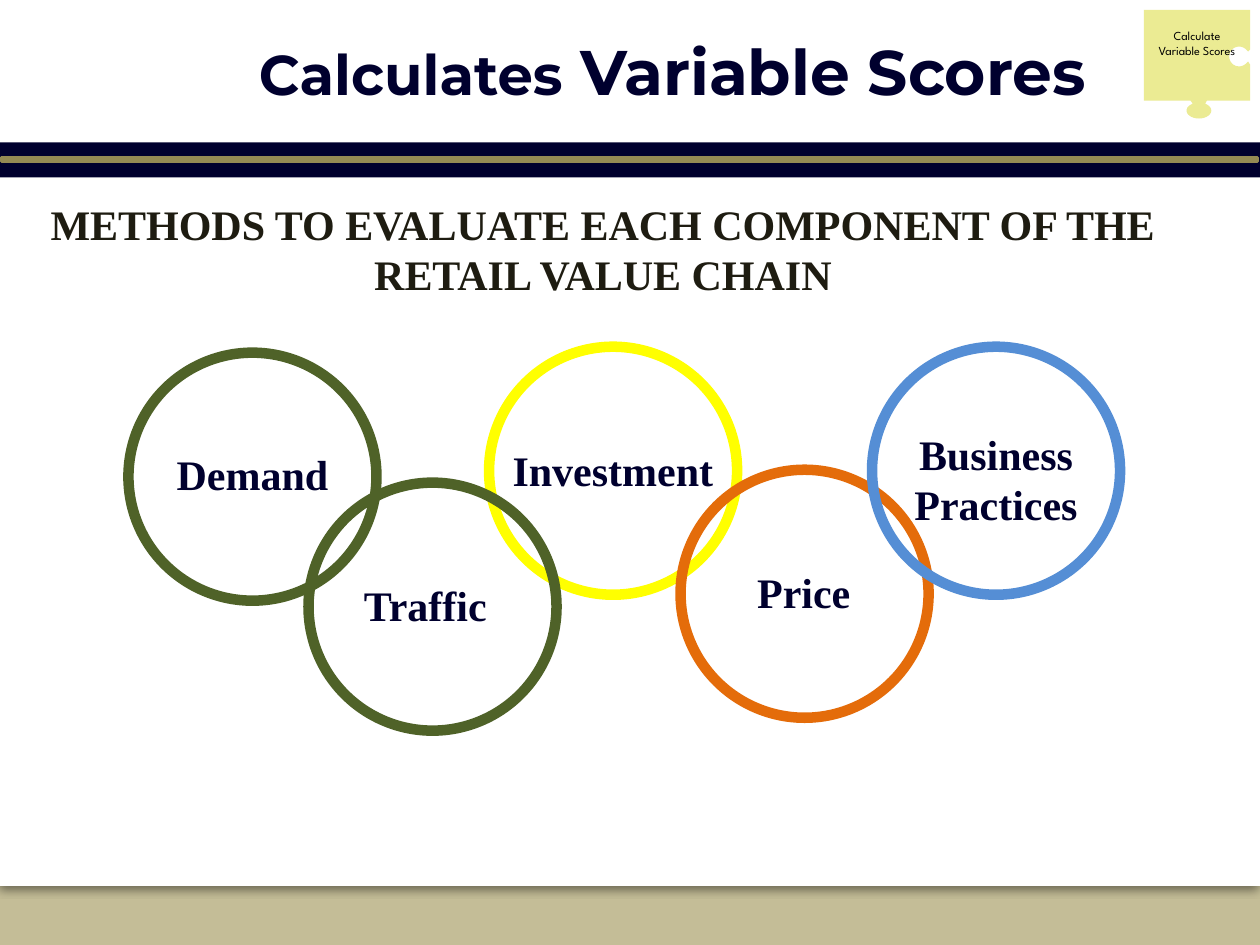
import math
from dataclasses import dataclass

import pptx
import pptx.dml.color
import pptx.enum.shapes
import pptx.enum.text
import pptx.oxml
import pptx.oxml.ns
import pptx.util

Cm = pptx.util.Cm
Pt = pptx.util.Pt
Shape = pptx.enum.shapes.MSO_SHAPE
Anchor = pptx.enum.text.MSO_ANCHOR


@dataclass(frozen=True)
class Theme:
    """Colours, fonts and sizes of the deck."""

    sand: str = "C4BD97"
    white: str = "FFFFFF"
    navy: str = "00002E"
    gold: str = "948A54"
    ink: str = "1E1C11"
    black: str = "000000"
    green: str = "4F6228"
    yellow: str = "FFFF00"
    orange: str = "E46C0A"
    blue: str = "558ED5"
    puzzle: str = "EBEB93"
    title_font: str = "Montserrat"
    body_font: str = "Times New Roman"
    puzzle_font: str = "League Spartan"
    title_sizes: tuple = (32, 36)
    body_size: int = 24
    puzzle_size: int = 7
    ring_width: int = 6
    ring_diameter: float = 5.0


def rgb(code):
    """Return a colour from its hex code."""
    return pptx.dml.color.RGBColor.from_string(code)


def arc(centre, radii, start, end, steps=24):
    """Return points along an elliptical arc, with angles in degrees."""
    angles = [math.radians(start + (end - start) * i / steps) for i in range(steps + 1)]
    return [(centre[0] + radii[0] * math.cos(a), centre[1] + radii[1] * math.sin(a)) for a in angles]


class ValueChainSlide:
    """Holds the theme and the current slide and draws its elements."""

    def __init__(self, deck, theme):
        """Add a title-only slide with the theme background."""
        self.theme = theme
        self.slide = deck.slides.add_slide(deck.slide_layouts[5])
        self.shapes = self.slide.shapes
        self.slide.background.fill.solid()
        self.slide.background.fill.fore_color.rgb = rgb(theme.sand)

    def paint(self, shape, fill=None, line=None, width=0):
        """Set fill and line, and drop the shadow."""
        shape.shadow.inherit = False
        if fill:
            shape.fill.solid()
            shape.fill.fore_color.rgb = rgb(fill)
        else:
            shape.fill.background()
        if line:
            shape.line.color.rgb = rgb(line)
            shape.line.width = Pt(width)
        else:
            shape.line.fill.background()
        return shape

    def style_text(self, frame, font, colour, size=None, bold=True):
        """Centre and format every paragraph of a text frame."""
        for paragraph in frame.paragraphs:
            paragraph.alignment = pptx.enum.text.PP_ALIGN.CENTER
            paragraph.font.name = font
            paragraph.font.bold = bold
            paragraph.font.color.rgb = rgb(colour)
            if size:
                paragraph.font.size = Pt(size)

    def bar(self, box, fill, line=None, width=0):
        """Draw a rectangle."""
        bar = self.shapes.add_shape(Shape.RECTANGLE, *map(Cm, box))
        return self.paint(bar, fill, line, width)

    def panel(self, box, fill):
        """Draw a rectangle that casts a soft shadow downwards."""
        effects = self.bar(box, fill)._element.spPr.find(pptx.oxml.ns.qn("a:effectLst"))
        effects.append(pptx.oxml.parse_xml(
            f'<a:outerShdw {pptx.oxml.ns.nsdecls("a")} blurRad="{Pt(5)}" dist="{Pt(2)}"'
            f' dir="5400000" rotWithShape="0"><a:srgbClr val="{self.theme.black}">'
            '<a:alpha val="43000"/></a:srgbClr></a:outerShdw>'))

    def title(self, box, parts):
        """Place the title above the panel and give its parts their sizes."""
        title = self.shapes.title
        self.shapes._spTree.append(title._element)
        title.left, title.top, title.width, title.height = map(Cm, box)
        frame = title.text_frame
        frame.vertical_anchor = Anchor.MIDDLE
        for part, size in zip(parts, self.theme.title_sizes):
            run = frame.paragraphs[0].add_run()
            run.text = part
            run.font.size = Pt(size)
            run._r.get_or_add_rPr().insert(0, pptx.oxml.parse_xml(
                f'<a:ln {pptx.oxml.ns.nsdecls("a")} w="{Pt(0.52)}"><a:solidFill>'
                f'<a:srgbClr val="{self.theme.gold}"/></a:solidFill></a:ln>'))
        self.style_text(frame, self.theme.title_font, self.theme.navy)

    def text(self, box, words, colour, anchor=Anchor.TOP, wrap=True):
        """Add a text box in the body style."""
        frame = self.shapes.add_textbox(*map(Cm, box)).text_frame
        frame.text = words
        frame.word_wrap = wrap
        frame.vertical_anchor = anchor
        self.style_text(frame, self.theme.body_font, colour, self.theme.body_size)

    def ring(self, corner, colour, words, label, fill=None):
        """Draw one link of the chain with its label."""
        side = self.theme.ring_diameter
        ring = self.shapes.add_shape(Shape.OVAL, *map(Cm, (*corner, side, side)))
        self.paint(ring, fill, colour, self.theme.ring_width)
        self.text(label, words, self.theme.navy, wrap="\n" not in words)

    def puzzle_piece(self, left, top, right, bottom, words):
        """Draw a puzzle piece with a notch on the right and a knob below."""
        notch = arc((24.98, 1.14), (0.2, 0.2), -50, -310)
        knob = arc((24.17, 2.23), (0.25, 0.16), -60, 240)
        outline = [
            (left, top), (right, top), (right, 1.0), (25.16, 1.04), *notch,
            (25.16, 1.24), (right, 1.3), (right, bottom), (24.33, bottom), *knob,
            (24.0, bottom), (left, bottom),
        ]
        points = [(Cm(x), Cm(y)) for x, y in outline]
        builder = self.shapes.build_freeform(*points[0], scale=1.0)
        builder.add_line_segments(points[1:], close=True)
        piece = self.paint(builder.convert_to_shape(), self.theme.puzzle)
        frame = piece.text_frame
        frame.text = words
        frame.word_wrap = True
        frame.vertical_anchor = Anchor.MIDDLE
        frame.margin_left = frame.margin_right = Cm(0.25)
        frame.margin_top, frame.margin_bottom = Cm(0.13), Cm(0.99)
        self.style_text(frame, self.theme.puzzle_font, self.theme.black, self.theme.puzzle_size, False)


def main():
    """Build the slide and save it."""
    theme = Theme()
    deck = pptx.Presentation()
    deck.slide_width, deck.slide_height = Cm(25.4), Cm(19.05)
    page = ValueChainSlide(deck, theme)
    page.panel((0, 0, 25.4, 17.86), theme.white)
    page.bar((0, 2.87, 25.4, 0.71), theme.navy)
    page.bar((0.03, 3.18, 25.32, 0.08), theme.gold, theme.gold, 2)
    page.title((3.61, 0.43, 19.89, 1.96), ("Calculates", " Variable Scores"))
    rings = [
        ((2.59, 7.11), theme.green, "Demand", (2.36, 8.92, 5.46, 1.3), theme.white),
        ((9.86, 6.99), theme.yellow, "Investment", (10.03, 8.84, 4.65, 1.3)),
        ((13.72, 9.47), theme.orange, "Price", (14.96, 11.3, 2.49, 1.3)),
        ((17.58, 6.99), theme.blue, "Business\nPractices", (18.16, 8.51, 3.84, 2.31)),
        ((6.22, 9.73), theme.green, "Traffic", (6.63, 11.56, 3.89, 1.3)),
    ]
    for ring in rings:
        page.ring(*ring)
    page.text((0.51, 3.76, 23.29, 2.51),
              "METHODS TO EVALUATE EACH COMPONENT OF THE RETAIL VALUE CHAIN",
              theme.ink, Anchor.MIDDLE)
    page.puzzle_piece(23.06, 0.2, 25.2, 2.03, "Calculate Variable Scores")
    deck.save("out.pptx")


if __name__ == "__main__":
    main()
